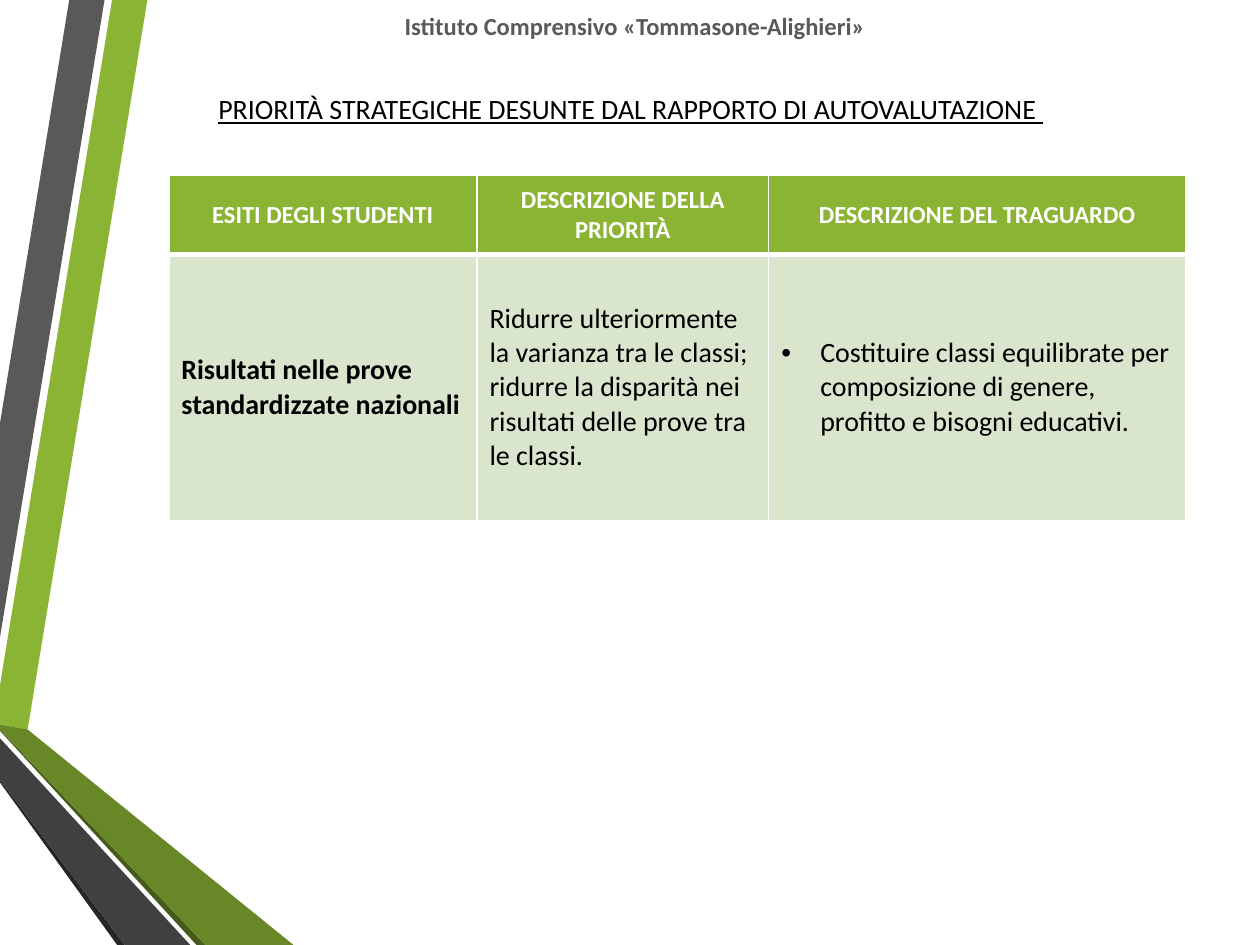
from lxml.etree import SubElement
from pptx import Presentation
from pptx.dml.color import RGBColor
from pptx.enum.text import MSO_ANCHOR, MSO_AUTO_SIZE, PP_ALIGN
from pptx.oxml.ns import qn
from pptx.util import Inches, Pt

WIDTH, HEIGHT = Inches(10), Inches(7.5)
GRID_COLUMNS, GRID_ROWS = 1000, 750
GREEN, DARK_GREY, PALE_GREEN, WHITE, BLACK = "8BB434", "595959", "DAE5CE", "FFFFFF", "000000"

RIBBONS = [
    (GREEN, [(0, 544), (0, 575), (22, 579), (117, 0), (89, 0)]),
    (DARK_GREY, [(83, 0), (55, 0), (0, 336), (0, 506)]),
    ("262626", [(0, 619), (0, 621), (93, 750), (99, 750)]),
    ("465A1A", [(0, 579), (0, 580), (156, 750), (163, 750)]),
    ("688727", [(0, 579), (163, 750), (233, 750), (22, 579), (0, 575)]),
    ("404040", [(0, 619), (99, 750), (151, 750), (0, 586)]),
]
HEADINGS = ["ESITI DEGLI STUDENTI", "DESCRIZIONE DELLA PRIORITÀ", "DESCRIZIONE DEL TRAGUARDO"]
ENTRIES = [
    "Risultati nelle prove standardizzate nazionali",
    "Ridurre ulteriormente la varianza tra le classi; ridurre la disparità nei "
    "risultati delle prove tra le classi.",
    "Costituire classi equilibrate per composizione di genere, profitto e bisogni educativi.",
]


def colour(value):
    """Turn a hex string into a colour."""
    return RGBColor.from_string(value)


def grid_box(left, top, width, height):
    """Turn grid columns and rows into lengths on the slide."""
    across, down = WIDTH / GRID_COLUMNS, HEIGHT / GRID_ROWS
    return [round(part) for part in (left * across, top * down, width * across, height * down)]


def write(frame, text, align, font_colour, **font_values):
    """Put one formatted paragraph in a text frame."""
    para = frame.paragraphs[0]
    para.alignment = align
    span = para.add_run()
    span.text = text
    span.font.color.rgb = colour(font_colour)
    for name, value in {"name": "Calibri", **font_values}.items():
        setattr(span.font, name, value)


def add_ribbons(page, box):
    """Draw the folded ribbons along the left side of the box."""
    left, top, width, height = box
    scale = (width / GRID_COLUMNS, height / GRID_ROWS)
    for fill, points in RIBBONS:
        builder = page.shapes.build_freeform(*points[0], scale=scale)
        builder.add_line_segments(points[1:], close=True)
        ribbon = builder.convert_to_shape(left, top)
        ribbon.shadow.inherit = False
        ribbon.fill.solid()
        ribbon.fill.fore_color.rgb = colour(fill)
        ribbon.line.fill.background()


def place_heading(shape, box, text, font_colour, **font_values):
    """Place a centred line of text in the box."""
    for name, value in zip(("left", "top", "width", "height"), box):
        setattr(shape, name, value)
    frame = shape.text_frame
    settings = {"word_wrap": True, "auto_size": MSO_AUTO_SIZE.NONE,
                "vertical_anchor": MSO_ANCHOR.TOP}
    for name, value in settings.items():
        setattr(frame, name, value)
    write(frame, text, PP_ALIGN.CENTER, font_colour, **font_values)


def add_borders(cell, widths):
    """Give a cell white borders, with a width in points for each side."""
    properties = cell._tc.get_or_add_tcPr()
    for side, width in widths.items():
        line = SubElement(properties, qn(f"a:ln{side}"), w=str(Pt(width)))
        fill = SubElement(line, qn("a:solidFill"))
        SubElement(fill, qn("a:srgbClr"), val=WHITE)


def add_bullet(para, indent):
    """Give a paragraph a round bullet with a hanging indent."""
    properties = para._p.get_or_add_pPr()
    properties.set("marL", str(indent))
    properties.set("indent", str(-indent))
    SubElement(properties, qn("a:buFont"), typeface="Arial")
    SubElement(properties, qn("a:buChar"), char="•")


def add_priorities(page, box):
    """Add the table of priorities and targets in the box."""
    table = page.shapes.add_table(2, 3, *box).table
    for column, share in zip(table.columns, (0.303, 0.287, 0.41)):
        column.width = round(box[2] * share)
    for row, share in zip(table.rows, (0.23, 0.77)):
        row.height = round(box[3] * share)
    styles = [
        (HEADINGS, GREEN, WHITE, PP_ALIGN.CENTER, 14, {"L": 1, "R": 1, "T": 1, "B": 3}),
        (ENTRIES, PALE_GREEN, BLACK, PP_ALIGN.LEFT, 16, {"L": 1, "R": 1, "T": 3, "B": 1}),
    ]
    for row, (texts, fill, font_colour, align, size, borders) in enumerate(styles):
        for column, text in enumerate(texts):
            cell = table.cell(row, column)
            add_borders(cell, borders)
            cell.fill.solid()
            cell.fill.fore_color.rgb = colour(fill)
            cell.vertical_anchor = MSO_ANCHOR.MIDDLE
            write(cell.text_frame, text, align, font_colour,
                  size=Pt(size), bold=row == 0 or column == 0)
    add_bullet(table.cell(1, 2).text_frame.paragraphs[0], Inches(0.31))


def main():
    """Build and save the slide."""
    deck = Presentation()
    deck.slide_width, deck.slide_height = WIDTH, HEIGHT
    page = deck.slides.add_slide(deck.slide_layouts[5])
    add_ribbons(page, grid_box(0, 0, GRID_COLUMNS, GRID_ROWS))
    add_priorities(page, grid_box(134, 139, 807, 274))
    school_box = grid_box(114, 4, 780, 34)
    place_heading(page.shapes.add_textbox(*school_box), school_box,
                  "Istituto Comprensivo «Tommasone-Alighieri»", DARK_GREY,
                  size=Pt(14), bold=True)
    place_heading(page.shapes.title, grid_box(91, 68, 819, 37),
                  "PRIORITÀ STRATEGICHE DESUNTE DAL RAPPORTO DI AUTOVALUTAZIONE ", BLACK,
                  size=Pt(16), underline=True)
    deck.save("out.pptx")


if __name__ == "__main__":
    main()
